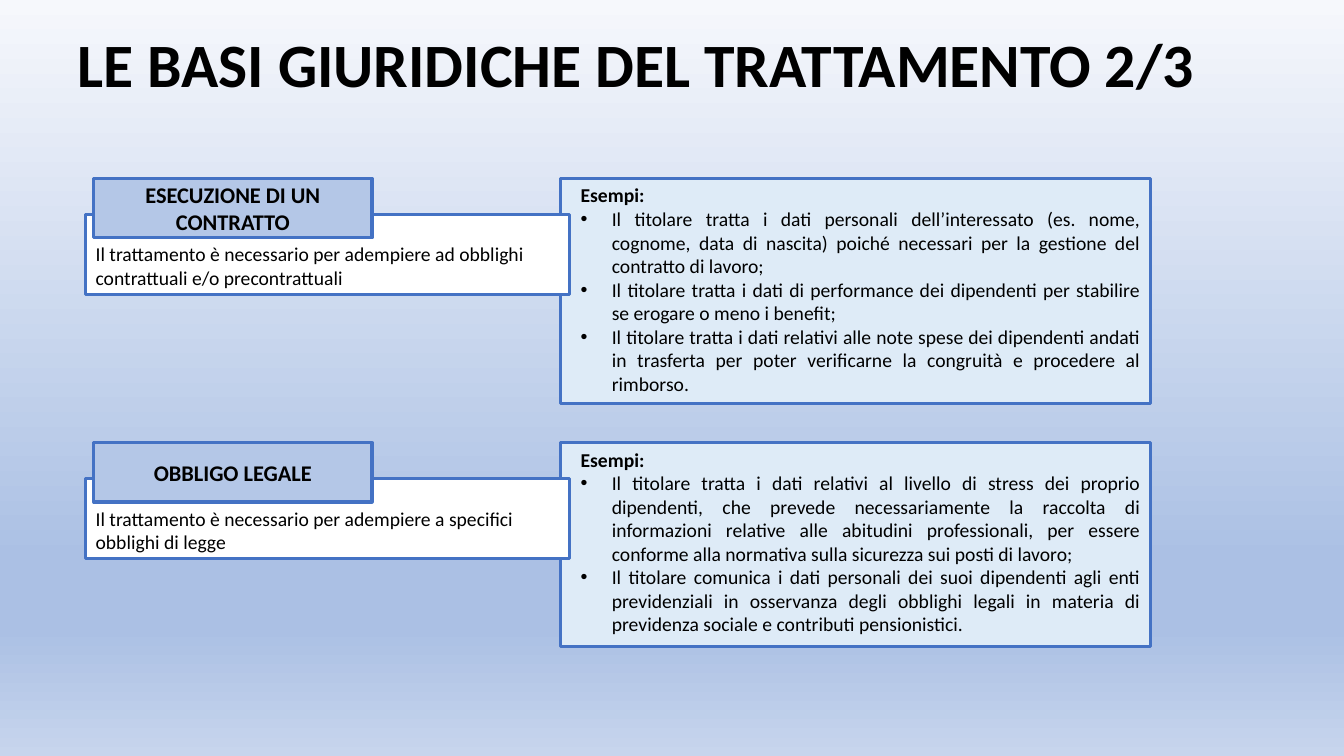
from dataclasses import dataclass

from lxml import etree
from pptx import Presentation
from pptx.dml.color import RGBColor
from pptx.enum.shapes import MSO_SHAPE
from pptx.enum.text import MSO_ANCHOR, PP_ALIGN
from pptx.oxml.ns import qn
from pptx.util import Inches, Pt

RECT = MSO_SHAPE.RECTANGLE
TOP, MIDDLE, BOTTOM = MSO_ANCHOR.TOP, MSO_ANCHOR.MIDDLE, MSO_ANCHOR.BOTTOM
LEFT, CENTER, JUSTIFY = PP_ALIGN.LEFT, PP_ALIGN.CENTER, PP_ALIGN.JUSTIFY

FONT = "Calibri"
BLACK, WHITE = "000000", "FFFFFF"
BLUE, MID, PALE = "4472C4", "B4C7E7", "DEEBF7"
STOPS = [(0, "F6F8FC"), (74, "ABC0E4"), (83, "ABC0E4"), (100, "C7D5ED")]


@dataclass
class Basis:
    """A legal basis: its name, its meaning and a panel of examples."""
    top: float
    high: float
    name: str
    text: str
    cases: list[str]


BASES = [
    Basis(1.77, 2.23, "ESECUZIONE DI UN CONTRATTO",
          "Il trattamento è necessario per adempiere ad obblighi contrattuali e/o precontrattuali",
          ["Il titolare tratta i dati personali dell’interessato (es. nome, cognome, data di "
           "nascita) poiché necessari per la gestione del contratto di lavoro;",
           "Il titolare tratta i dati di performance dei dipendenti per stabilire se erogare "
           "o meno i benefit;",
           "Il titolare tratta i dati relativi alle note spese dei dipendenti andati in "
           "trasferta per poter verificarne la congruità e procedere al rimborso."]),
    Basis(4.39, 2.02, "OBBLIGO LEGALE",
          "Il trattamento è necessario per adempiere a specifici obblighi di legge",
          ["Il titolare tratta i dati relativi al livello di stress dei proprio dipendenti, "
           "che prevede necessariamente la raccolta di informazioni relative alle abitudini "
           "professionali, per essere conforme alla normativa sulla sicurezza sui posti di "
           "lavoro;",
           "Il titolare comunica i dati personali dei suoi dipendenti agli enti previdenziali "
           "in osservanza degli obblighi legali in materia di previdenza sociale e contributi "
           "pensionistici."]),
]


def color(code: str) -> RGBColor:
    return RGBColor.from_string(code)


def paint_back(slide) -> None:
    fill = slide.background.fill
    fill.gradient()
    fill.gradient_angle = 270
    stops = next(slide.element.iter(qn("a:gsLst")))
    for old in list(stops):
        stops.remove(old)
    for place, code in STOPS:
        stop = etree.SubElement(stops, qn("a:gs"), pos=str(place * 1000))
        etree.SubElement(stop, qn("a:srgbClr"), val=code)


def write(shape, text: str, *, size: float = 14, bold: bool = False, align=LEFT,
          anchor=TOP, left: float = 0, hang: float = 0, bullet: str = "") -> None:
    """Fill the first paragraph, or add one after text already there."""
    frame = shape.text_frame
    frame.word_wrap = True
    frame.vertical_anchor = anchor
    par = frame.add_paragraph() if frame.text else frame.paragraphs[0]
    par.alignment = align
    run = par.add_run()
    run.text = text
    run.font.name, run.font.size, run.font.bold = FONT, Pt(size), bold
    run.font.color.rgb = color(BLACK)
    props = par._p.get_or_add_pPr()
    props.set("marL", str(Inches(left)))
    props.set("indent", str(Inches(-hang)))
    if bullet:
        etree.SubElement(props, qn("a:buFont"), typeface="Arial")
        etree.SubElement(props, qn("a:buChar"), char=bullet)


def add_box(slide, left: float, top: float, wide: float, high: float, fill: str):
    box = slide.shapes.add_shape(RECT, Inches(left), Inches(top), Inches(wide), Inches(high))
    box.shadow.inherit = False
    box.fill.solid()
    box.fill.fore_color.rgb = color(fill)
    box.line.color.rgb = color(BLUE)
    box.line.width = Pt(2.25)
    return box


def add_basis(slide, basis: Basis) -> None:
    panel = add_box(slide, 5.56, basis.top, 5.85, basis.high, PALE)
    write(panel, "Esempi:", bold=True, left=0.1)
    for case in basis.cases:
        write(panel, case, align=JUSTIFY, left=0.41, hang=0.31, bullet="•")
    body = add_box(slide, 0.85, basis.top + 0.36, 4.8, 0.79, WHITE)
    write(body, basis.text, anchor=BOTTOM)
    label = add_box(slide, 0.93, basis.top, 2.76, 0.59, MID)
    write(label, basis.name, size=16, bold=True, align=CENTER, anchor=MIDDLE)


def main() -> None:
    deck = Presentation()
    deck.slide_width, deck.slide_height = Inches(13.33), Inches(7.5)
    slide = deck.slides.add_slide(deck.slide_layouts[6])
    paint_back(slide)
    title = slide.shapes.add_textbox(Inches(0.67), Inches(0), Inches(11.84), Inches(1.25))
    write(title, "LE BASI GIURIDICHE DEL TRATTAMENTO 2/3", size=44, bold=True, anchor=MIDDLE)
    for basis in BASES:
        add_basis(slide, basis)
    deck.save("out.pptx")


if __name__ == "__main__":
    main()
